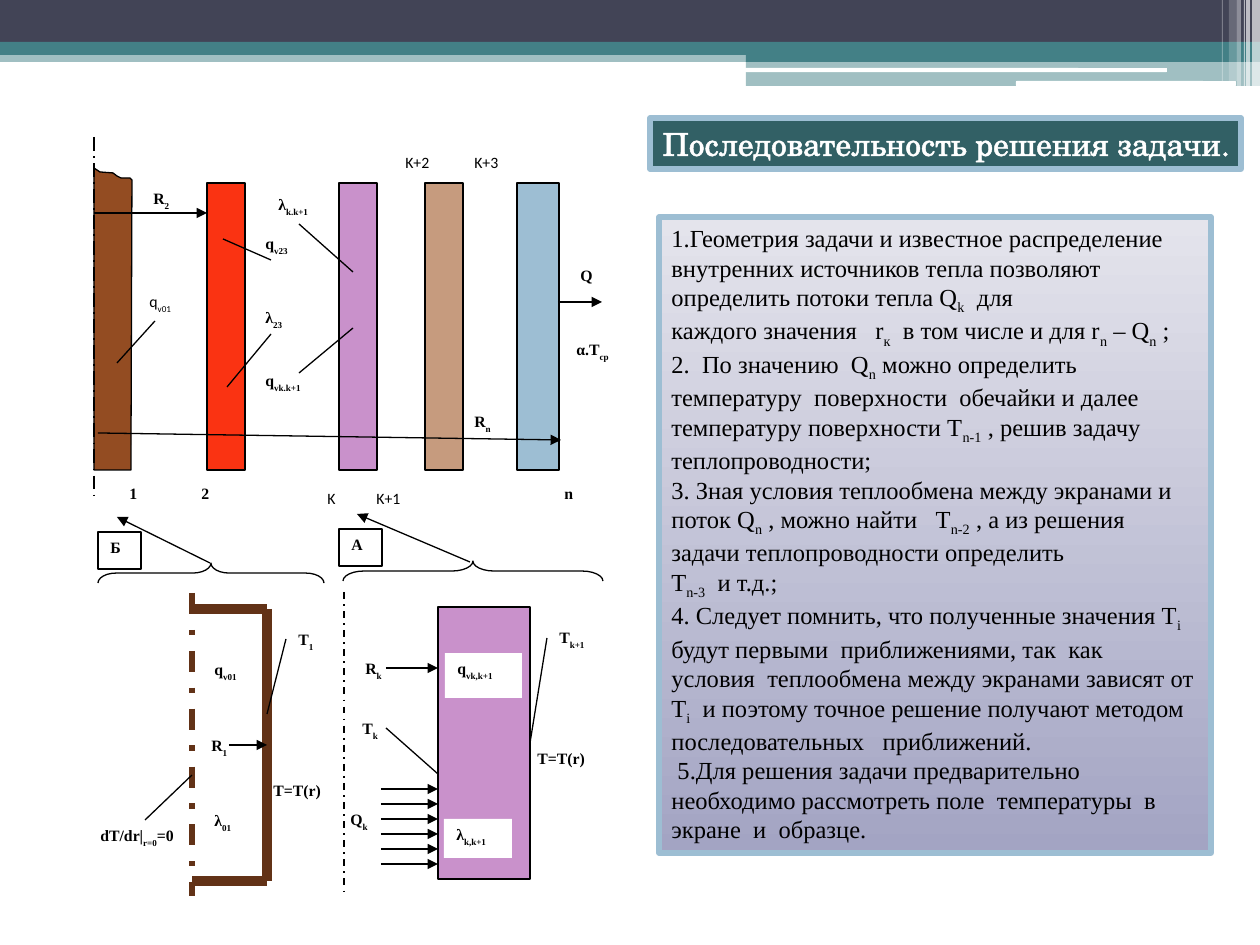
import dataclasses

import lxml.etree as etree
import pptx
import pptx.dml.color
import pptx.enum.dml
import pptx.enum.shapes
import pptx.enum.text
import pptx.oxml.ns
import pptx.util

SCALE = 914400 / 126
SHAPE = pptx.enum.shapes.MSO_SHAPE
DASH = pptx.enum.dml.MSO_LINE
qn = pptx.oxml.ns.qn


@dataclasses.dataclass(frozen=True)
class Theme:
    white: str = "FFFFFF"
    black: str = "000000"
    navy: str = "424456"
    teal: str = "438086"
    deep: str = "326065"
    sky: str = "9DBED3"
    red: str = "FA3312"
    plum: str = "C991CB"
    tan: str = "C69B7E"
    brown: str = "934C22"
    dark: str = "623217"
    low: str = "A3A4C3"
    high: str = "E4E4EC"
    serif: str = "Times New Roman"
    plain: str = "Calibri"
    head: str = "TeX Gyre Schola"
    small: int = 9
    body: int = 14
    title: int = 18
    thin: float = 0.75


def px(*nums):
    return [pptx.util.Emu(round(n * SCALE)) for n in nums]


def rgb(code):
    return pptx.dml.color.RGBColor.from_string(code)


def write(frame, text, *, font, size, color, bold=False, drop=30, edge=None):
    """Fill a frame, one paragraph per line; text between ~ marks is subscript."""
    frame.word_wrap = True
    frame.vertical_anchor = pptx.enum.text.MSO_ANCHOR.TOP
    for i, row in enumerate(text.split("\n")):
        para = frame.add_paragraph() if i else frame.paragraphs[0]
        para.alignment = pptx.enum.text.PP_ALIGN.LEFT
        for j, part in enumerate(row.split("~")):
            if not part:
                continue
            run = para.add_run()
            run.text = part
            run.font.name, run.font.size = font, pptx.util.Pt(size)
            run.font.bold, run.font.color.rgb = bold, rgb(color)
            props = run._r.get_or_add_rPr()
            if j % 2:
                props.set("baseline", str(-drop * 1000))
            if edge:
                ln = etree.Element(qn("a:ln"), w=str(pptx.util.Pt(edge)))
                fill = etree.SubElement(ln, qn("a:solidFill"))
                etree.SubElement(fill, qn("a:srgbClr"), val=color)
                props.insert(0, ln)


class Page:
    def __init__(self, slide, theme):
        self.slide, self.theme = slide, theme
        self.items = slide.shapes

    def style(self, shape, fill, line=None, width=None, alpha=100):
        if hasattr(shape, "shadow"):
            shape.shadow.inherit = False
        if fill:
            shape.fill.solid()
            shape.fill.fore_color.rgb = rgb(fill)
            if alpha < 100:
                tint = shape._element.spPr.find(".//" + qn("a:srgbClr"))
                etree.SubElement(tint, qn("a:alpha"), val=str(alpha * 1000))
        else:
            shape.fill.background()
        if line:
            shape.line.color.rgb = rgb(line)
            shape.line.width = pptx.util.Pt(width or self.theme.thin)
        else:
            shape.line.fill.background()
        return shape

    def box(self, at, fill, line=None, kind=SHAPE.RECTANGLE, **look):
        return self.style(self.items.add_shape(kind, *px(*at)), fill, line, **look)

    def label(self, at, text, line=None):
        t = self.theme
        shape = self.box(at, t.white, line)
        write(shape.text_frame, text, font=t.serif, size=t.small, color=t.black, bold=True)

    def note(self, at, text):
        t = self.theme
        area = self.items.add_textbox(*px(*at))
        write(area.text_frame, text, font=t.plain, size=t.small, color=t.black)

    def line(self, ends, color=None, width=None, dash=None, arrow=False):
        kind = pptx.enum.shapes.MSO_CONNECTOR.STRAIGHT
        con = self.items.add_connector(kind, *px(*ends))
        con.line.color.rgb = rgb(color or self.theme.black)
        con.line.width = pptx.util.Pt(width or self.theme.thin)
        if dash:
            con.line.dash_style = dash
        props = con._element.spPr
        if arrow:
            etree.SubElement(props.find(qn("a:ln")), qn("a:tailEnd"), type="triangle")
        etree.SubElement(props, qn("a:effectLst"))

    def brace(self, mid, top, span, bend):
        deep = 20
        at = (mid - deep / 2, top + deep / 2 - span / 2, deep, span)
        shape = self.box(at, None, self.theme.black, SHAPE.RIGHT_BRACE)
        shape.rotation = 270
        shape.adjustments[0], shape.adjustments[1] = bend, 0.5

    def outline(self, points, fill):
        pen = self.items.build_freeform(*points[0], scale=SCALE)
        pen.add_line_segments(points[1:], close=True)
        self.style(pen.convert_to_shape(), fill, self.theme.black)

    def title(self, at, text):
        t = self.theme
        shape = self.items.title
        shape.left, shape.top, shape.width, shape.height = px(*at)
        self.style(shape, t.deep, t.sky, 3)
        frame = shape.text_frame
        frame.auto_size = pptx.enum.text.MSO_AUTO_SIZE.NONE
        frame.margin_right = 0
        write(frame, text, font=t.head, size=t.title, color=t.white, edge=1.45)

    def panel(self, at, text):
        t = self.theme
        shape = self.box(at, t.low, t.sky, width=3)
        shape.fill.gradient()
        shape.fill.gradient_angle = 90
        for stop, tone in zip(shape.fill.gradient_stops, (t.low, t.high)):
            stop.color.rgb = rgb(tone)
        write(shape.text_frame, text, font=t.serif, size=t.body, color=t.black, drop=25)


STEPS = """1.Геометрия задачи и известное распределение внутренних источников тепла позволяют определить потоки тепла Q~k~  для
каждого значения   r~к~  в том числе и для r~n~ – Q~n~ ;
2.  По значению  Q~n~ можно определить  температуру  поверхности  обечайки и далее температуру поверхности Т~n-1~ , решив задачу теплопроводности;
3. Зная условия теплообмена между экранами и поток Q~n~ , можно найти   Т~n-2~ , а из решения задачи теплопроводности определить
Т~n-3~  и т.д.;
4. Следует помнить, что полученные значения T~i~ будут первыми  приближениями, так  как  условия  теплообмена между экранами зависят от T~i~  и поэтому точное решение получают методом последовательных   приближений.
 5.Для решения задачи предварительно необходимо рассмотреть поле  температуры  в экране  и  образце."""


def main():
    t = Theme()
    deck = pptx.Presentation()
    deck.slide_width, deck.slide_height = px(1260, 945)
    page = Page(deck.slides.add_slide(deck.slide_layouts[5]), t)

    # Header bands and bright strips
    for at, fill, alpha in [((0, 50, 1260, 12), t.teal, 50), ((0, 0, 1260, 43), t.navy, 100),
                            ((0, 42, 1260, 13), t.teal, 100), ((746, 49, 514, 13), t.teal, 100),
                            ((746, 61, 514, 25), t.teal, 50)]:
        page.box(at, fill, alpha=alpha)
    for at in [(745, 68, 422, 4), (1016, 81, 220, 5)]:
        page.box(at, t.white, kind=SHAPE.ROUNDED_RECTANGLE)
    for x, w, h, alpha in [(1252, 8, 86, 65), (1246, 4, 86, 65), (1244, 1, 86, 60),
                           (1237, 4, 86, 40), (1229, 8, 81, 20), (1222, 1, 81, 30)]:
        page.box((x, 0, w, h), t.white, alpha=alpha)

    # Symbols around the three drawings
    for x, y, w, h, text in [
            (266, 189, 60, 39, "λ~k.k+1~"), (141, 183, 55, 45, "R~2~"), (462, 406, 47, 45, "R~n~"),
            (117, 478, 44, 37, "1"), (189, 478, 44, 37, "2"), (552, 478, 43, 37, "n"),
            (253, 228, 59, 39, "q~v23~"), (253, 302, 59, 39, "λ~23~"), (253, 365, 72, 39, "q~vk.k+1~"),
            (568, 260, 45, 38, "Q"), (564, 334, 71, 40, "α.T~cp~"), (525, 743, 77, 45, "T=T(r)"),
            (338, 804, 49, 45, "Q~k~"), (353, 653, 49, 45, "R~k~"), (350, 713, 52, 45, "T~k~"),
            (547, 622, 52, 45, "T~k+1~"), (88, 820, 112, 45, "dT/dr|~r=0~=0"), (261, 775, 77, 45, "T=T(r)"),
            (202, 805, 49, 47, "λ~01~"), (202, 654, 59, 45, "q~v01~"), (199, 730, 49, 45, "R~1~"),
            (286, 624, 52, 45, "T~1~")]:
        page.label((x, y, w, h), text)

    # Screens and the enlarged screen
    page.outline([(94, 168), (100, 172), (113, 173), (117, 176), (121, 178), (130, 178),
                  (132, 180), (131, 470), (94, 470)], t.brown)
    for x, w, fill in [(207, 38, t.red), (339, 38, t.plum), (425, 38, t.tan), (517, 42, t.sky)]:
        page.box((x, 183, w, 287), fill, t.black)
    page.box((438, 607, 92, 272), t.plum, t.black)
    page.label((444, 819, 68, 39), "λ~k,k+1~")
    page.label((445, 653, 77, 45), "q~vk,k+1~")

    # Axes
    page.line((94, 137, 94, 500), width=1, dash=DASH.LONG_DASH_DOT)
    page.line((344, 592, 344, 895), width=1, dash=DASH.DASH_DOT)
    page.line((192, 593, 192, 896), t.dark, 3, DASH.DASH_DOT)

    # Sample outline
    for ends in [(192, 609, 267, 609), (267, 609, 267, 881), (267, 881, 192, 881)]:
        page.line(ends, t.dark, 6)

    # Leader lines
    for ends in [(117, 363, 155, 321), (271, 260, 223, 239), (227, 387, 271, 334),
                 (299, 224, 353, 272), (299, 373, 353, 328), (386, 728, 438, 774),
                 (547, 638, 530, 743), (286, 639, 267, 714), (192, 775, 145, 820)]:
        page.line(ends)

    # Arrows, with six equal heat flow arrows
    flows = [(381, 789 + 15 * i, 438, 789 + 15 * i) for i in range(6)]
    for ends in [(94, 213, 207, 213), (98, 433, 561, 440), (558, 302, 602, 302),
                 (386, 668, 438, 668), (229, 745, 267, 745), (470, 562, 357, 514),
                 (210, 563, 117, 517)] + flows:
        page.line(ends, arrow=True)

    # Braces and view marks
    page.brace(473, 561, 260, 1.055)
    page.brace(211, 563, 226, 0.917)
    page.label((339, 529, 43, 37), "А", t.black)
    page.label((98, 532, 43, 37), "Б", t.black)

    # Screen numbers
    for x, y, w, h, text in [(315, 483, 39, 29, "K"), (364, 483, 49, 35, "K+1"), (393, 147, 49, 29, "K+2"),
                             (462, 147, 49, 29, "K+3"), (137, 286, 59, 42, "q~v01~")]:
        page.note((x, y, w, h), text)

    # Title and steps
    page.title((650, 118, 591, 51), "Последовательность решения задачи.")
    page.panel((659, 217, 552, 636), STEPS)
    deck.save("out.pptx")


if __name__ == "__main__":
    main()
